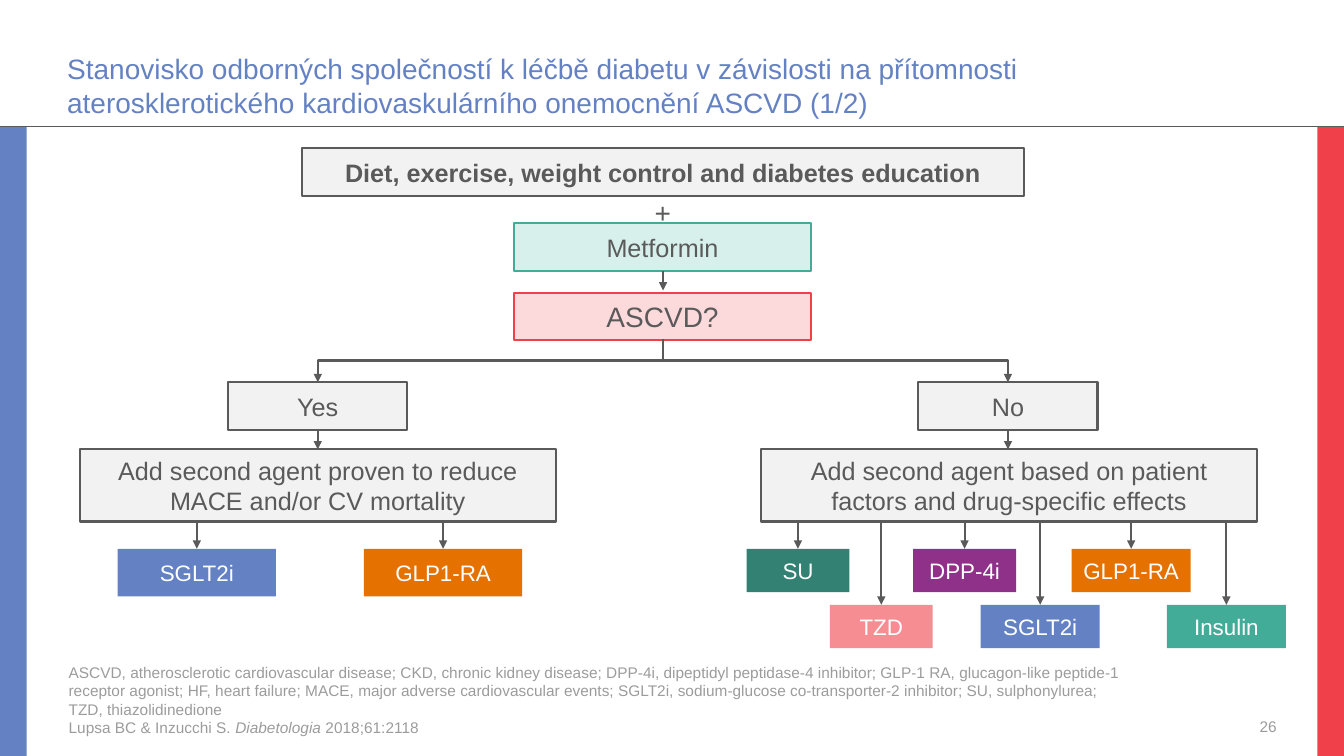
from lxml.etree import SubElement
from pptx import Presentation
from pptx.dml.color import RGBColor
from pptx.enum.shapes import MSO_CONNECTOR as LINE, MSO_SHAPE as SHAPE
from pptx.enum.text import MSO_ANCHOR as ANCHOR, PP_ALIGN as ALIGN
from pptx.oxml.ns import qn
from pptx.util import Pt

COLORS = {
    "blue": "6482C3", "red": "F0414B", "dark": "5A5A5A", "light": "F2F2F2",
    "grey": "9C9C9C", "teal": "43AC99", "pale teal": "D8F0EB",
    "pale red": "FCD9DB", "orange": "E57200", "green": "328173",
    "pink": "F68D93", "purple": "8F3089", "white": "FFFFFF",
}
RGB = {name: RGBColor.from_string(value) for name, value in COLORS.items()}

prs = Presentation()
prs.slide_width, prs.slide_height = Pt(960), Pt(540)
s = prs.slides.add_slide(prs.slide_layouts[6])


def add_box(x, y, w, h, fill, line=None, text="", size=18, color="dark", bold=False):
    sp = s.shapes.add_shape(SHAPE.RECTANGLE, Pt(x), Pt(y), Pt(w), Pt(h))
    sp.shadow.inherit = False
    sp.fill.solid()
    sp.fill.fore_color.rgb = RGB[fill]
    if line:
        sp.line.color.rgb = RGB[line]
        sp.line.width = Pt(1.5)
    else:
        sp.line.fill.background()
    if text:
        tf = sp.text_frame
        tf.text = text
        tf.word_wrap = True
        tf.vertical_anchor = ANCHOR.MIDDLE
        p = tf.paragraphs[0]
        p.alignment = ALIGN.CENTER
        f = p.runs[0].font
        f.name, f.size, f.bold, f.color.rgb = "Arial", Pt(size), bold, RGB[color]


def add_line(x1, y1, x2, y2, kind=LINE.STRAIGHT, width=1.5, arrow=True):
    c = s.shapes.add_connector(kind, Pt(x1), Pt(y1), Pt(x2), Pt(y2))
    c.line.color.rgb = RGB["dark"]
    c.line.width = Pt(width)
    spPr = c._element.spPr
    if arrow:
        SubElement(spPr.find(qn("a:ln")), qn("a:tailEnd"), type="triangle")
    SubElement(spPr, qn("a:effectLst"))
    return c


# Side bars and header rule
add_box(0, 90.5, 19, 449.5, "blue")
add_box(941, 90, 19, 450, "red")
add_line(0, 90, 960, 90, width=0.25, arrow=False)

# Title, footnote, page number and plus sign
title = ("Stanovisko odborných společností k léčbě diabetu v závislosti na přítomnosti "
         "aterosklerotického kardiovaskulárního onemocnění ASCVD (1/2)")
abbreviations = (
    "ASCVD, atherosclerotic cardiovascular disease; CKD, chronic kidney disease; "
    "DPP-4i, dipeptidyl peptidase-4 inhibitor; GLP‑1 RA, glucagon-like peptide-1 "
    "receptor agonist; HF, heart failure; MACE, major adverse cardiovascular events; "
    "SGLT2i, sodium-glucose co‑transporter‑2 inhibitor; SU, sulphonylurea; "
    "TZD, thiazolidinedione")
citation = [("Lupsa BC & Inzucchi S. ", False), ("Diabetologia ", True), ("2018;61:2118", False)]
texts = [
    (48, 13, 806, 72, [[(title, False)]], 20, "blue", ALIGN.LEFT),
    (49, 488, 763, 38.5, [[(abbreviations, False)], citation], 11, "grey", ALIGN.LEFT),
    (865.5, 497, 46.5, 28.5, [[("26", False)]], 11, "grey", ALIGN.RIGHT),
    (448, 139, 51, 24.5, [[("+", False)]], 20, "dark", ALIGN.CENTER),
]
for x, y, w, h, paragraphs, size, color, align in texts:
    tf = s.shapes.add_textbox(Pt(x), Pt(y), Pt(w), Pt(h)).text_frame
    tf.word_wrap = True
    tf.vertical_anchor = ANCHOR.BOTTOM
    tf.margin_left = tf.margin_right = tf.margin_top = tf.margin_bottom = 0
    for i, runs in enumerate(paragraphs):
        p = tf.add_paragraph() if i else tf.paragraphs[0]
        p.alignment = align
        for text, italic in runs:
            r = p.add_run()
            r.text = text
            f = r.font
            f.name, f.size, f.italic, f.color.rgb = "Arial", Pt(size), italic, RGB[color]

# Shared start of the treatment path
MID = 473.6
BOX_H = 34
add_box(215.5, 106, 516, BOX_H, "light", "dark",
        "Diet, exercise, weight control and diabetes education", bold=True)
add_box(367, 159.5, 212.5, BOX_H, "pale teal", "teal", "Metformin")
add_box(367, 209, 212.5, BOX_H, "pale red", "red", "ASCVD?", size=20)
add_line(MID, 193.5, MID, 207.5)

# Yes and No branches: answer, centre, advice left and width
FORK_TOP, ANSWER_TOP, ADVICE_TOP, ADVICE_H = 242, 273, 321, 51.5
branches = [
    ("Yes", 227, 57, 340, "Add second agent proven to reduce MACE and/or CV mortality"),
    ("No", 720, 543.5, 354.5, "Add second agent based on patient factors and drug-specific effects"),
]
for answer, x, left, w, advice in branches:
    # A turned elbow leaves its start downwards, so its box lies on its side
    cx, cy = (MID + x) / 2, (FORK_TOP + ANSWER_TOP) / 2
    half_drop, half_run = (ANSWER_TOP - FORK_TOP) / 2, abs(x - MID) / 2
    side = 1 if x < MID else -1
    fork = add_line(cx - side * half_drop, cy - half_run,
                    cx + side * half_drop, cy + half_run, LINE.ELBOW)
    fork._element.spPr.find(qn("a:xfrm")).set("rot", str(60000 * (90 if side > 0 else 270)))
    add_box(x - 64, ANSWER_TOP, 128, BOX_H, "light", "dark", answer)
    add_line(x, ANSWER_TOP + BOX_H, x, ADVICE_TOP)
    add_box(left, ADVICE_TOP, w, ADVICE_H, "light", "dark", advice)

# Drugs: name, centre, top, width, height, fill
UPPER, LOWER = 392, 432
drugs = [
    ("SGLT2i", 140.6, UPPER, 113, 34, "blue"),
    ("GLP1-RA", 316.5, UPPER, 113, 34, "orange"),
    ("SU", 570, UPPER, 73.5, 31, "green"),
    ("TZD", 629.5, LOWER, 73.5, 31, "pink"),
    ("DPP-4i", 689, UPPER, 73.5, 31, "purple"),
    ("SGLT2i", 743, LOWER, 85, 31, "blue"),
    ("GLP1-RA", 808, UPPER, 85, 31, "orange"),
    ("Insulin", 876, LOWER, 85, 31, "teal"),
]
for name, x, top, w, h, fill in drugs:
    add_box(x - w / 2, top, w, h, fill, text=name, size=16, color="white")
    add_line(x, ADVICE_TOP + ADVICE_H, x, top)

prs.save("out.pptx")
